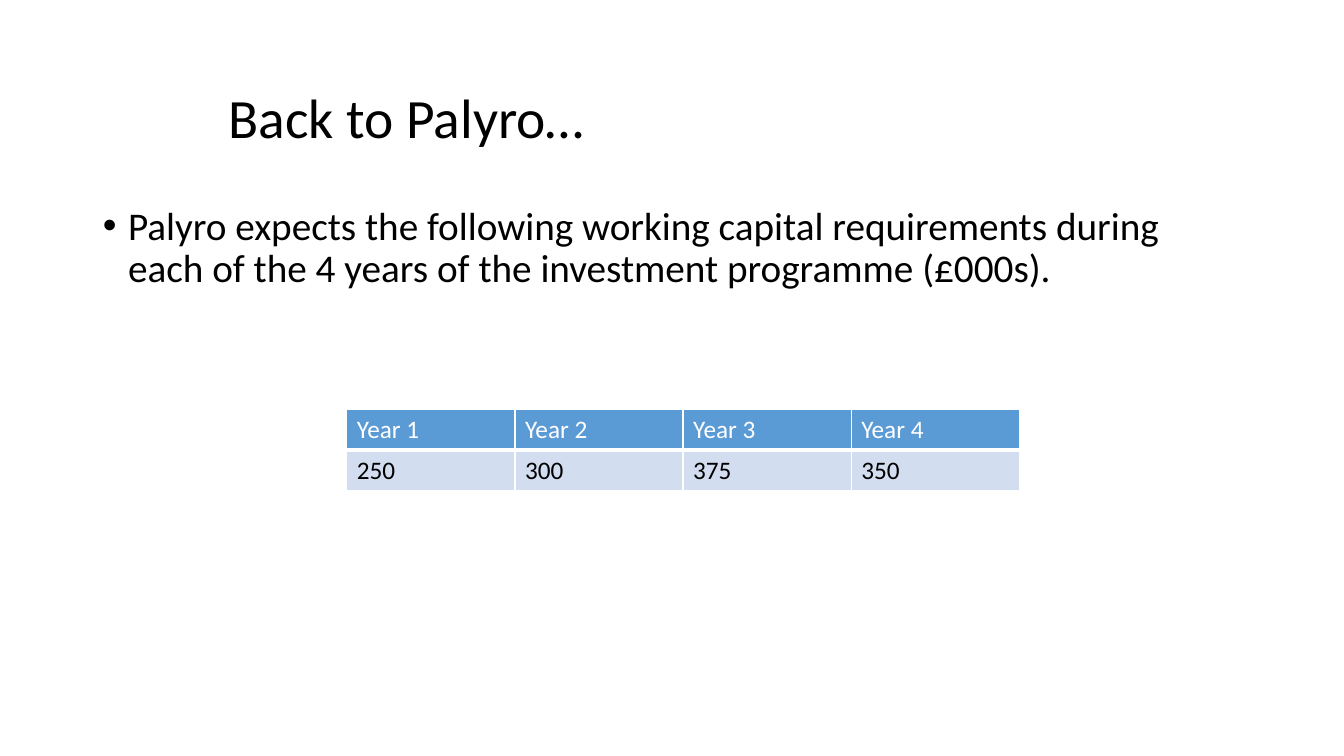
from lxml.etree import SubElement
from pptx import Presentation
from pptx.dml.color import RGBColor
from pptx.enum.text import MSO_ANCHOR, MSO_AUTO_SIZE, PP_ALIGN
from pptx.oxml.ns import qn
from pptx.util import Inches, Pt

COLORS = {"text": "000000", "light": "FFFFFF", "header": "5B9BD5", "band": "D2DEEF"}


def write(frame, text, size, color="text", line_spacing=1.0, space_before=0):
    frame.text = text
    paragraph = frame.paragraphs[0]
    paragraph.alignment = PP_ALIGN.LEFT
    paragraph.line_spacing = line_spacing
    paragraph.space_before = Pt(space_before)
    font = paragraph.runs[0].font
    font.name, font.size, font.bold = "Calibri", Pt(size), False
    font.color.rgb = RGBColor.from_string(COLORS[color])
    return paragraph


def add_borders(cell, bottom):
    properties = cell._tc.get_or_add_tcPr()
    for position, side in enumerate(("L", "R", "T", "B")):
        width = bottom if side == "B" else 1
        line = properties.makeelement(qn(f"a:ln{side}"), {"w": str(Pt(width))})
        fill = SubElement(line, qn("a:solidFill"))
        SubElement(fill, qn("a:srgbClr"), val=COLORS["light"])
        properties.insert(position, line)


prs = Presentation()
prs.slide_width, prs.slide_height = Inches(13.33), Inches(7.5)
slide = prs.slides.add_slide(prs.slide_layouts[1])

# Title and statement
heading, statement = slide.placeholders
heading.left, heading.top = Inches(2.17), Inches(0.84)
heading.width, heading.height = Inches(9), Inches(0.71)
statement.left, statement.top = Inches(0.92), Inches(2)
statement.width, statement.height = Inches(11.5), Inches(4.76)
for part in (heading, statement):
    part.text_frame.auto_size = MSO_AUTO_SIZE.NONE
heading.text_frame.vertical_anchor = MSO_ANCHOR.MIDDLE

write(heading.text_frame, "Back to Palyro…", 39.6, line_spacing=0.9)
bullet = write(
    statement.text_frame,
    "Palyro expects the following working capital requirements during "
    "each of the 4 years of the investment programme (£000s).",
    28, line_spacing=0.9, space_before=10)
indent = bullet._p.get_or_add_pPr()
indent.set("marL", str(Inches(0.25)))
indent.set("indent", str(-Inches(0.25)))
SubElement(indent, qn("a:buFont"), typeface="Arial")
SubElement(indent, qn("a:buChar"), char="•")

# Working capital by year
capital = {"Year 1": "250", "Year 2": "300", "Year 3": "375", "Year 4": "350"}
requirements = slide.shapes.add_table(
    2, len(capital), Inches(3.44), Inches(4.06), Inches(6.67), Inches(0.81)).table
row_styles = [(capital.keys(), "header", "light", 3), (capital.values(), "band", "text", 1)]
for row, (entries, fill, color, bottom) in enumerate(row_styles):
    for column, entry in enumerate(entries):
        cell = requirements.cell(row, column)
        write(cell.text_frame, entry, 18, color=color)
        cell.fill.solid()
        cell.fill.fore_color.rgb = RGBColor.from_string(COLORS[fill])
        add_borders(cell, bottom)

prs.save("out.pptx")
